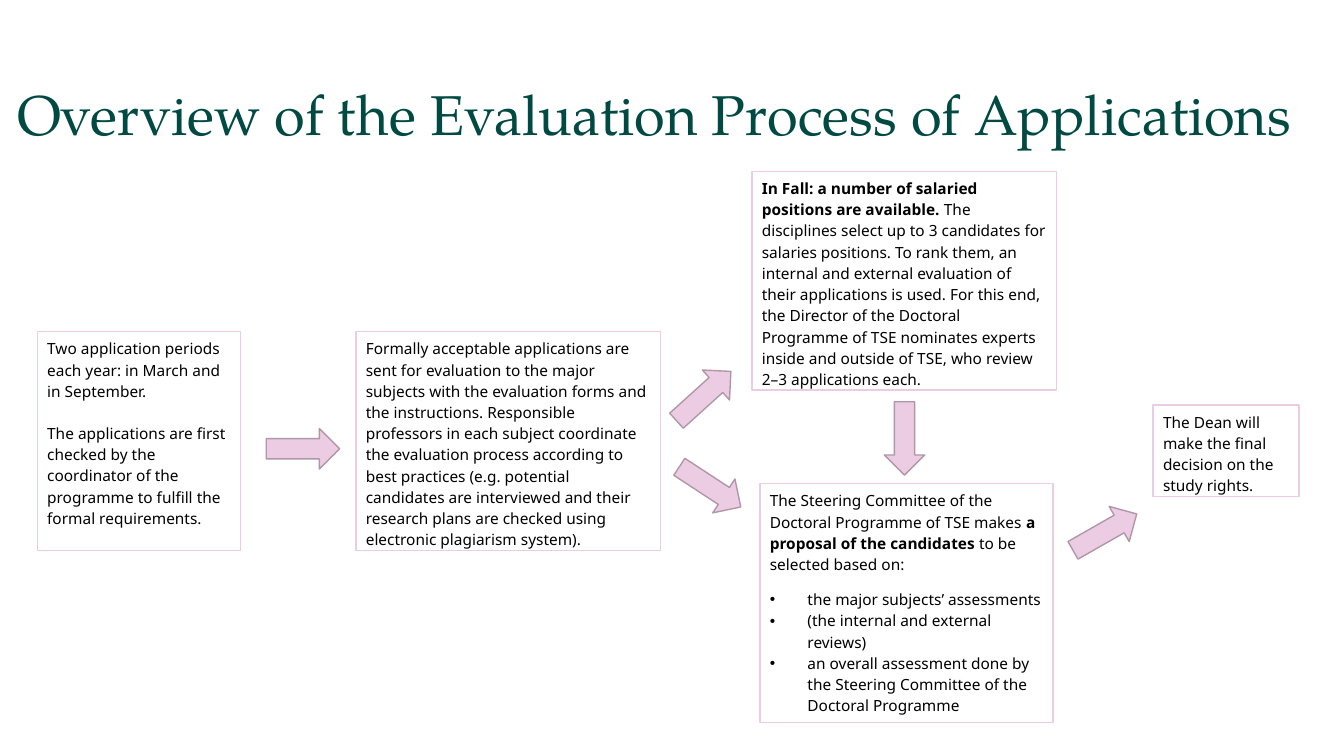
from lxml import etree
from pptx import Presentation
from pptx.dml.color import RGBColor
from pptx.enum.shapes import MSO_SHAPE
from pptx.enum.text import MSO_ANCHOR, PP_ALIGN
from pptx.oxml.ns import qn
from pptx.util import Cm, Pt

RECTANGLE, RIGHT_ARROW = MSO_SHAPE.RECTANGLE, MSO_SHAPE.RIGHT_ARROW
TOP, MIDDLE, LEFT = MSO_ANCHOR.TOP, MSO_ANCHOR.MIDDLE, PP_ALIGN.LEFT

GREEN = RGBColor(0x00, 0x4A, 0x43)
BLACK = RGBColor(0x00, 0x00, 0x00)
WHITE = RGBColor(0xFF, 0xFF, 0xFF)
PINK = RGBColor(0xEC, 0xCC, 0xE3)
MAUVE = RGBColor(0xAF, 0x97, 0xA8)

TITLE_FONT = {"name": "TeX Gyre Pagella", "size": Pt(40)}
BODY_FONT = {"name": "Noto Sans", "size": Pt(11)}
BODY_PARAGRAPH = {"alignment": LEFT, "line_spacing": 1.15}
TITLE_FRAME = {"word_wrap": True, "vertical_anchor": MIDDLE, "margin_left": 0,
               "margin_right": 0, "margin_top": 0, "margin_bottom": 0}
BOX_FRAME = {"word_wrap": True, "vertical_anchor": TOP}
BULLET_INDENT = Cm(0.95)


def apply_format(target, values):
    for name, value in values.items():
        setattr(target, name, value)


def add_filled_shape(kind, place, fill, line):
    shape = slide.shapes.add_shape(kind, *[Cm(length) for length in place])
    shape.shadow.inherit = False
    shape.fill.solid()
    shape.fill.fore_color.rgb = fill
    shape.line.color.rgb = line
    shape.line.width = Pt(1)
    return shape


presentation = Presentation()
presentation.slide_width = Cm(33.87)
presentation.slide_height = Cm(19.05)
slide = presentation.slides.add_slide(presentation.slide_layouts[6])

title = slide.shapes.add_textbox(Cm(0.43), Cm(1.22), Cm(33.43), Cm(3.48))
apply_format(title.text_frame, TITLE_FRAME)
title_paragraph = title.text_frame.paragraphs[0]
title_paragraph.line_spacing = 0.9
title_run = title_paragraph.add_run()
title_run.text = "Overview of the Evaluation Process of Applications"
apply_format(title_run.font, TITLE_FONT)
title_run.font.color.rgb = GREEN

# Each paragraph: space before, space after, bulleted, runs of (text, bold)
boxes = [
    ((0.94, 8.36, 5.13, 5.51), [
        (0, 0, False, [("Two application periods each year: in March and in September.", False)]),
        (15, 10, False, [("The applications are first checked by the coordinator of the "
                          "programme to fulfill the formal requirements.", False)]),
    ]),
    ((8.97, 8.36, 7.67, 5.51), [
        (0, 10, False, [("Formally acceptable applications are sent for evaluation to the "
                         "major subjects with the evaluation forms and the instructions. "
                         "Responsible professors in each subject coordinate the evaluation "
                         "process according to best practices (e.g. potential candidates are "
                         "interviewed and their research plans are checked using electronic "
                         "plagiarism system).", False)]),
    ]),
    ((19.15, 12.19, 7.39, 6.02), [
        (0, 10, False, [("The Steering Committee of the Doctoral Programme of TSE makes ", False),
                        ("a proposal of the candidates ", True),
                        ("to be selected based on:", False)]),
        (0, 0, True, [("the major subjects’ assessments", False)]),
        (0, 0, True, [("(the internal and external reviews)", False)]),
        (0, 10, True, [("an overall assessment done by the Steering Committee of the "
                        "Doctoral Programme", False)]),
    ]),
    ((29.06, 10.21, 3.68, 2.31), [
        (0, 10, False, [("The Dean will make the final decision on the study rights.", False)]),
    ]),
    ((18.95, 4.32, 7.67, 5.51), [
        (0, 10, False, [("In Fall: a number of salaried positions are available. ", True),
                        ("The disciplines select up to 3 candidates for salaries positions. "
                         "To rank them, an internal and external evaluation of their "
                         "applications is used. For this end, the Director of the Doctoral "
                         "Programme of TSE nominates experts inside and outside of TSE, who "
                         "review 2–3 applications each.", False)]),
    ]),
]

for place, paragraphs in boxes:
    box = add_filled_shape(RECTANGLE, place, WHITE, PINK)
    frame = box.text_frame
    apply_format(frame, BOX_FRAME)
    for index, (before, after, bulleted, runs) in enumerate(paragraphs):
        paragraph = frame.add_paragraph() if index else frame.paragraphs[0]
        if bulleted:
            properties = paragraph._p.get_or_add_pPr()
            properties.set("marL", str(BULLET_INDENT))
            properties.set("indent", str(-BULLET_INDENT))
            etree.SubElement(properties, qn("a:buFont")).set("typeface", "Arial")
            etree.SubElement(properties, qn("a:buChar")).set("char", "•")
        apply_format(paragraph, BODY_PARAGRAPH)
        paragraph.space_before = Pt(before)
        paragraph.space_after = Pt(after)
        for text, bold in runs:
            run = paragraph.add_run()
            run.text = text
            apply_format(run.font, BODY_FONT)
            run.font.bold = bold
            run.font.color.rgb = BLACK

arrows = [
    (6.71, 10.8, 0),
    (16.81, 9.47, 317.8),
    (21.87, 10.54, 90),
    (26.92, 12.9, 330.3),
    (16.97, 11.76, 33.2),
]
for left, top, rotation in arrows:
    arrow = add_filled_shape(RIGHT_ARROW, (left, top, 1.85, 1.02), PINK, MAUVE)
    arrow.rotation = rotation

presentation.save("out.pptx")
